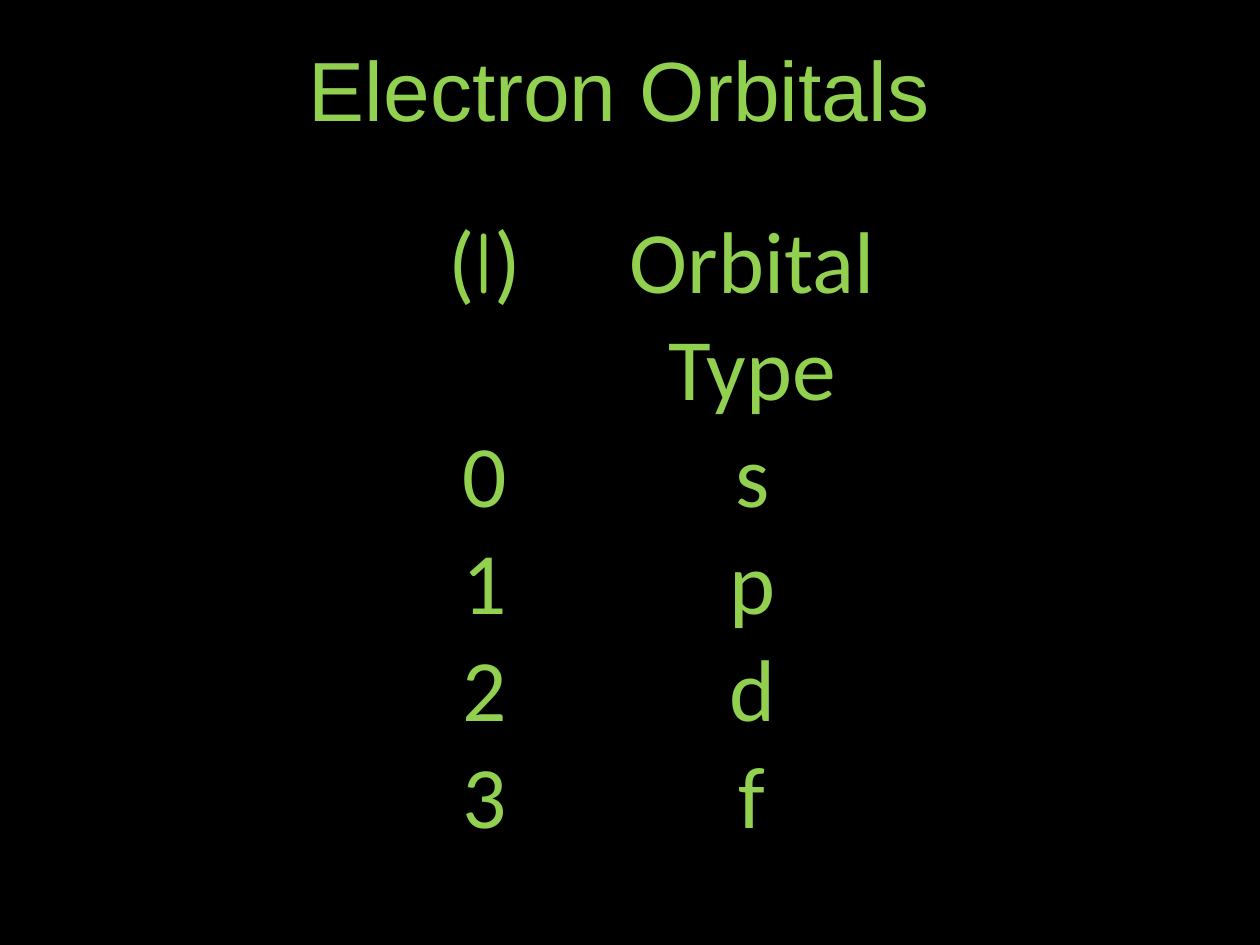
"""Build the Electron Orbitals slide with its table of orbital types."""
from lxml.etree import SubElement
from pptx import Presentation
from pptx.dml.color import RGBColor
from pptx.enum.text import PP_ALIGN
from pptx.oxml.ns import qn
from pptx.util import Inches, Pt

BLACK = RGBColor(0x00, 0x00, 0x00)
GREEN = RGBColor(0x92, 0xD0, 0x50)


def write(paragraph, text, font="Calibri", size=50):
    paragraph.alignment = PP_ALIGN.CENTER
    run = paragraph.add_run()
    run.text = text
    run.font.name = font
    run.font.size = Pt(size)
    run.font.color.rgb = GREEN


def draw_borders(cell):
    properties = cell._tc.get_or_add_tcPr()
    for position, side in enumerate(("a:lnL", "a:lnR", "a:lnT", "a:lnB")):
        border = SubElement(properties, qn(side), w=str(Pt(1)))
        fill = SubElement(border, qn("a:solidFill"))
        SubElement(fill, qn("a:srgbClr"), val=str(BLACK))
        properties.insert(position, border)


presentation = Presentation()
presentation.slide_width = Inches(10)
presentation.slide_height = Inches(7.5)
slide = presentation.slides.add_slide(presentation.slide_layouts[6])
slide.background.fill.solid()
slide.background.fill.fore_color.rgb = BLACK

orbitals = [("(l)", "Orbital Type"), ("0", "s"), ("1", "p"), ("2", "d"), ("3", "f")]
orbital_frame = slide.shapes.add_table(
    len(orbitals), 2, Inches(3.08), Inches(1.67), Inches(4.26), Inches(5))
orbital_table = orbital_frame.table
orbital_table.first_row = False
orbital_table.horz_banding = False
for column, width in zip(orbital_table.columns, (1.53, 2.72)):
    column.width = Inches(width)

for row_index, entries in enumerate(orbitals):
    orbital_table.rows[row_index].height = Inches(0.58 if row_index else 0.8)
    for column_index, entry in enumerate(entries):
        cell = orbital_table.cell(row_index, column_index)
        cell.margin_left = cell.margin_right = Inches(0.07)
        cell.margin_top = cell.margin_bottom = 0
        cell.fill.background()
        draw_borders(cell)
        paragraph = cell.text_frame.paragraphs[0]
        if entry == "(l)":
            for symbol in entry:
                write(paragraph, symbol, font="Comic Neue" if symbol == "l" else "Calibri")
        else:
            write(paragraph, entry)
orbital_frame.width = Inches(4.26)
orbital_frame.height = Inches(5)

title = slide.shapes.add_textbox(Inches(0.25), Inches(0.25), Inches(9.33), Inches(0.9))
title.text_frame.word_wrap = True
heading = title.text_frame.paragraphs[0]
heading.space_before = Pt(4)
write(heading, "Electron Orbitals", font="Arial", size=48)

presentation.save("out.pptx")
